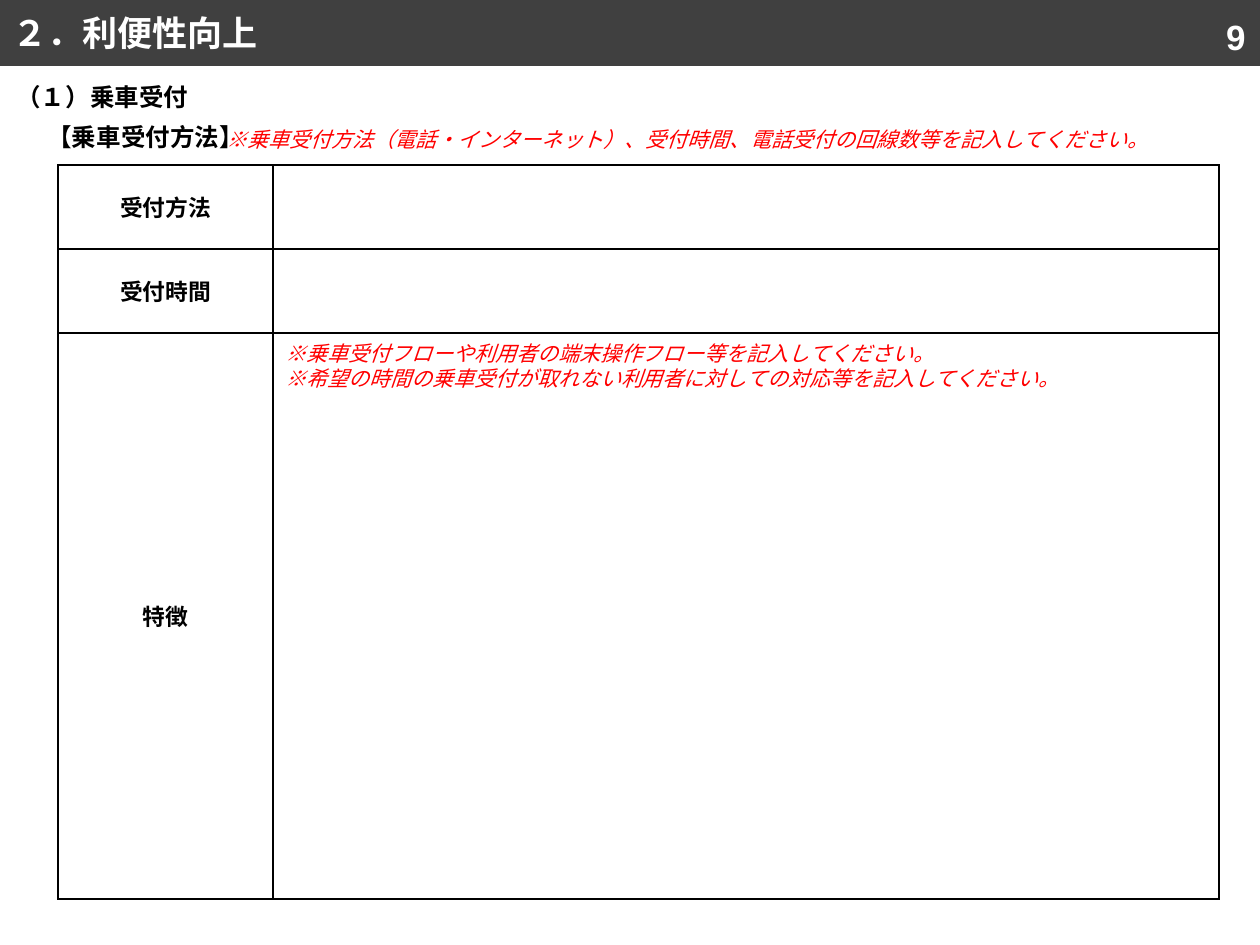
import pptx
import pptx.util
import pptx.dml.color
import pptx.enum.shapes
import pptx.enum.text
import pptx.oxml
import pptx.oxml.ns

EMU_PER_PX = 914400 // 126
ALIGN = pptx.enum.text.PP_ALIGN
ANCHOR = pptx.enum.text.MSO_ANCHOR


def px(length):
    return pptx.util.Emu(length * EMU_PER_PX)


def color(value):
    return pptx.dml.color.RGBColor.from_string(value)


def write(paragraph, text, font="Arial", size=12, fill="000000",
          bold=False, italic=False, align=ALIGN.LEFT):
    paragraph.alignment = align
    run = paragraph.add_run()
    run.text = text
    run.font.name = font
    run.font.size = pptx.util.Pt(size)
    run.font.bold = bold
    run.font.italic = italic
    run.font.color.rgb = color(fill)
    properties = run._r.get_or_add_rPr()
    east_asian = pptx.oxml.parse_xml(
        f'<a:ea {pptx.oxml.ns.nsdecls("a")} typeface="{font}"/>')
    properties.find(pptx.oxml.ns.qn("a:latin")).addnext(east_asian)


class Page:
    heading_font = "Noto Sans CJK JP"
    dark = "404040"
    white = "FFFFFF"
    black = "000000"
    red = "FF0000"

    def __init__(self, slide):
        self.slide = slide

    def title_bar(self, text, width, height):
        shape = self.slide.shapes.add_shape(
            pptx.enum.shapes.MSO_SHAPE.RECTANGLE, 0, 0, px(width), px(height))
        shape.shadow.inherit = False
        shape.fill.solid()
        shape.fill.fore_color.rgb = color(self.dark)
        shape.line.fill.background()
        shape.text_frame.vertical_anchor = ANCHOR.MIDDLE
        write(shape.text_frame.paragraphs[0], text, font=self.heading_font,
              size=20, fill=self.white, bold=True)

    def text(self, left, top, width, height, lines, **style):
        shape = self.slide.shapes.add_textbox(
            px(left), px(top), px(width), px(height))
        frame = shape.text_frame
        frame.word_wrap = True
        for index, line in enumerate(lines):
            paragraph = frame.add_paragraph() if index else frame.paragraphs[0]
            write(paragraph, line, **style)

    def heading(self, left, top, text):
        self.text(left, top, 712, 43, [text], size=14, bold=True)

    def note(self, left, top, height, lines):
        self.text(left, top, 980, height, lines, fill=self.red, italic=True)

    def border(self, cell):
        properties = cell._tc.get_or_add_tcPr()
        for index, side in enumerate(("lnL", "lnR", "lnT", "lnB")):
            properties.insert(index, pptx.oxml.parse_xml(
                f'<a:{side} {pptx.oxml.ns.nsdecls("a")} w="12700"><a:solidFill>'
                f'<a:srgbClr val="{self.black}"/></a:solidFill></a:{side}>'))

    def form(self, left, top, widths, heights, labels):
        table = self.slide.shapes.add_table(
            len(heights), len(widths), px(left), px(top),
            px(sum(widths)), px(sum(heights))).table
        table.first_row = False
        table.horz_banding = False
        for column, width in zip(table.columns, widths):
            column.width = px(width)
        for row, height, label in zip(table.rows, heights, labels):
            row.height = px(height)
            for cell in row.cells:
                cell.fill.solid()
                cell.fill.fore_color.rgb = color(self.white)
                cell.vertical_anchor = ANCHOR.MIDDLE
                cell.margin_left = cell.margin_right = px(8)
                cell.margin_top = cell.margin_bottom = 0
                self.border(cell)
            write(row.cells[0].text_frame.paragraphs[0], label,
                  font=self.heading_font, size=13, bold=True,
                  align=ALIGN.CENTER)


def main():
    presentation = pptx.Presentation()
    presentation.slide_width = px(1260)
    presentation.slide_height = px(945)
    page = Page(presentation.slides.add_slide(presentation.slide_layouts[6]))

    page.title_bar("２．利便性向上", 1260, 66)
    page.form(58, 165, (215, 946), (84, 84, 566),
              ("受付方法", "受付時間", "特徴"))
    page.heading(35, 116, "【乗車受付方法】")
    page.note(214, 120, 38, [
        "※乗車受付方法（電話・インターネット）、受付時間、電話受付の回線数等を記入してください。"])
    page.text(951, 9, 307, 48, ["9"], size=20, fill=page.white, bold=True,
              align=ALIGN.RIGHT)
    page.heading(4, 76, "（１）乗車受付")
    page.note(273, 334, 63, [
        "※乗車受付フローや利用者の端末操作フロー等を記入してください。",
        "※希望の時間の乗車受付が取れない利用者に対しての対応等を記入してください。"])

    presentation.save("out.pptx")


if __name__ == "__main__":
    main()
